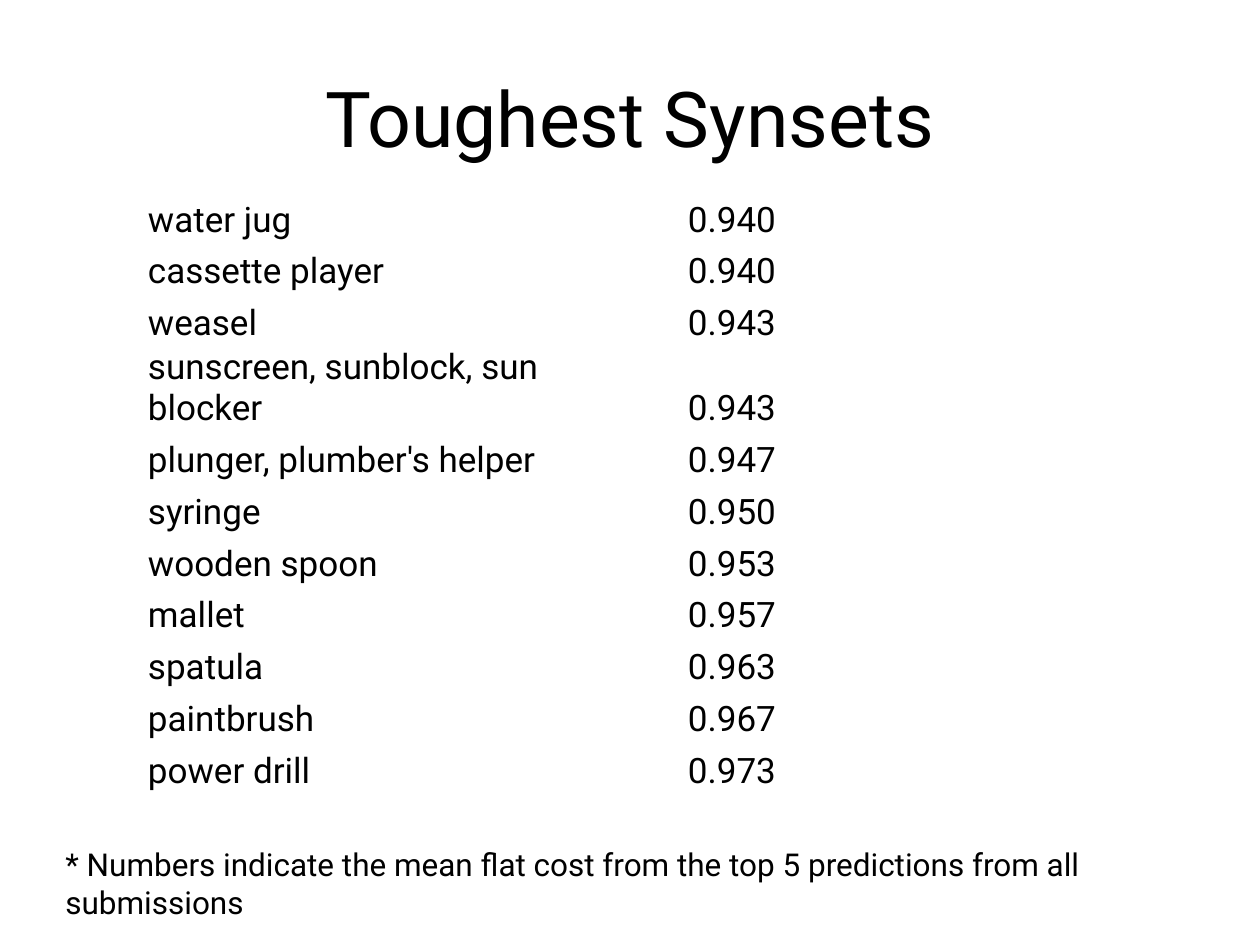
from pptx import Presentation
from pptx.dml.color import RGBColor
from pptx.enum.text import MSO_ANCHOR as Anchor, PP_ALIGN as Align
from pptx.util import Pt

EMU_PER_PX = 914400 / 126
FONT = "Roboto"
COLORS = {"text": "000000"}
SYNSET_COSTS = [
    ("water jug", "0.940"),
    ("cassette player", "0.940"),
    ("weasel", "0.943"),
    ("sunscreen, sunblock, sun blocker", "0.943"),
    ("plunger, plumber's helper", "0.947"),
    ("syringe", "0.950"),
    ("wooden spoon", "0.953"),
    ("mallet", "0.957"),
    ("spatula", "0.963"),
    ("paintbrush", "0.967"),
    ("power drill", "0.973"),
]


def px(length):
    """Turn pixels into EMU."""
    return round(length * EMU_PER_PX)


def write(frame, text, size, align=Align.LEFT):
    """Fill a text frame with one formatted paragraph."""
    frame.text = text
    paragraph = frame.paragraphs[0]
    paragraph.alignment = align
    font = paragraph.runs[0].font
    font.name, font.size = FONT, Pt(size)
    font.color.rgb = RGBColor.from_string(COLORS["text"])


def add_text(slide, box, text, size, align=Align.LEFT, anchor=Anchor.TOP):
    """Place a wrapped line of text in the given box."""
    frame = slide.shapes.add_textbox(*map(px, box)).text_frame
    frame.word_wrap = True
    frame.vertical_anchor = anchor
    write(frame, text, size, align)


def add_cost_table(slide, box, rows):
    """Place the synsets and their costs, three quarters to one quarter wide."""
    left, top, width, height = box
    costs = slide.shapes.add_table(
        len(rows), 2, px(left), px(top), px(width), px(height)).table
    costs.first_row = costs.horz_banding = False
    name_width = width * 3 // 4
    costs.columns[0].width = px(name_width)
    costs.columns[1].width = px(width - name_width)
    for row_index, row in enumerate(rows):
        for column, (text, align) in enumerate(zip(row, (Align.LEFT, Align.RIGHT))):
            cell = costs.cell(row_index, column)
            cell.fill.background()
            cell.margin_left = cell.margin_right = cell.margin_top = px(1)
            cell.margin_bottom = 0
            cell.vertical_anchor = Anchor.BOTTOM
            write(cell.text_frame, text, 20, align)


def main():
    """Build and save the slide."""
    deck = Presentation()
    deck.slide_width, deck.slide_height = px(1260), px(945)
    slide = deck.slides.add_slide(deck.slide_layouts[6])
    add_text(slide, (63, 38, 1134, 157), "Toughest Synsets", 44,
             Align.CENTER, Anchor.MIDDLE)
    add_cost_table(slide, (147, 189, 630, 570), SYNSET_COSTS)
    add_text(slide, (53, 839, 1189, 50),
             "* Numbers indicate the mean flat cost from the top 5 predictions "
             "from all submissions", 18)
    deck.save("out.pptx")


if __name__ == "__main__":
    main()
